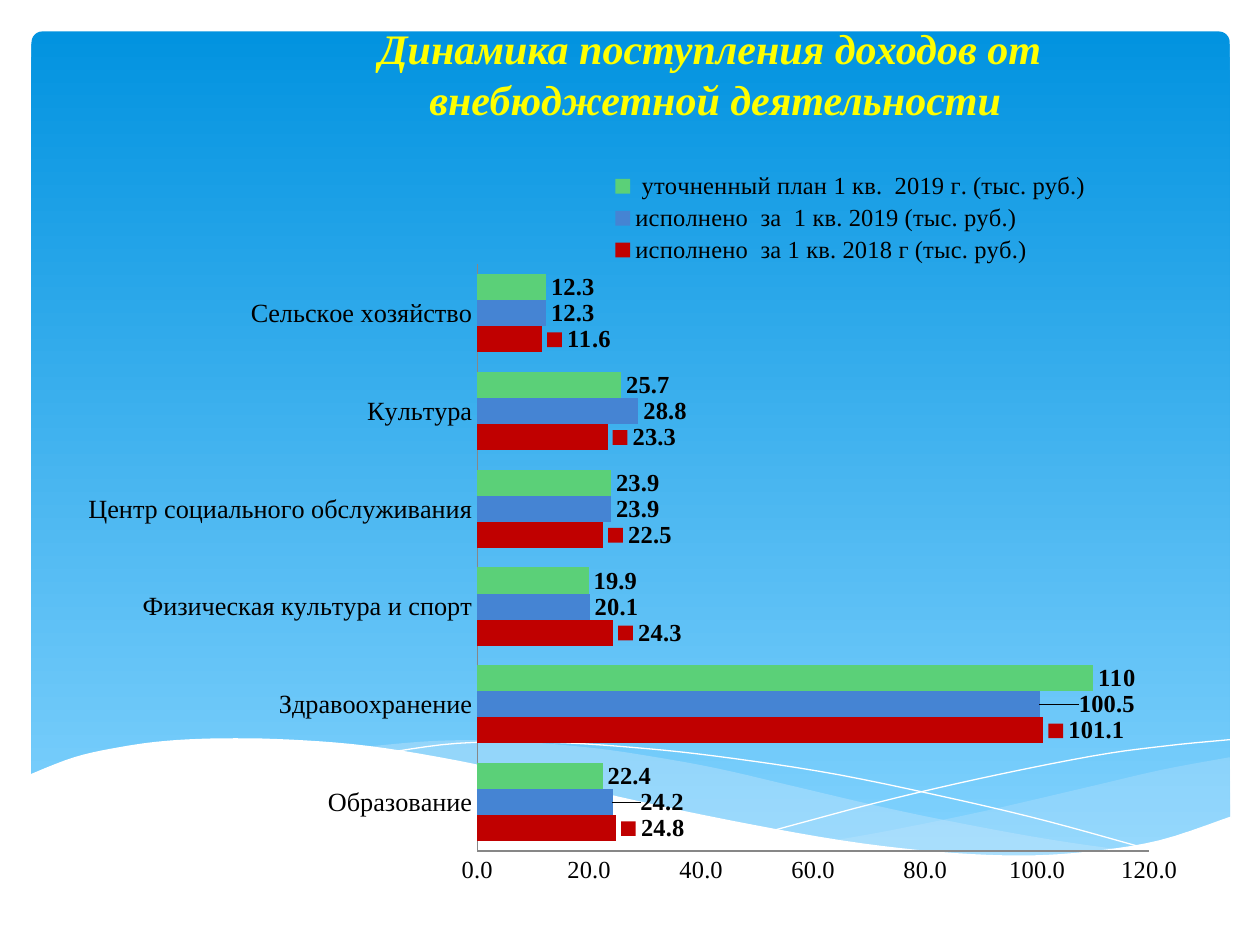
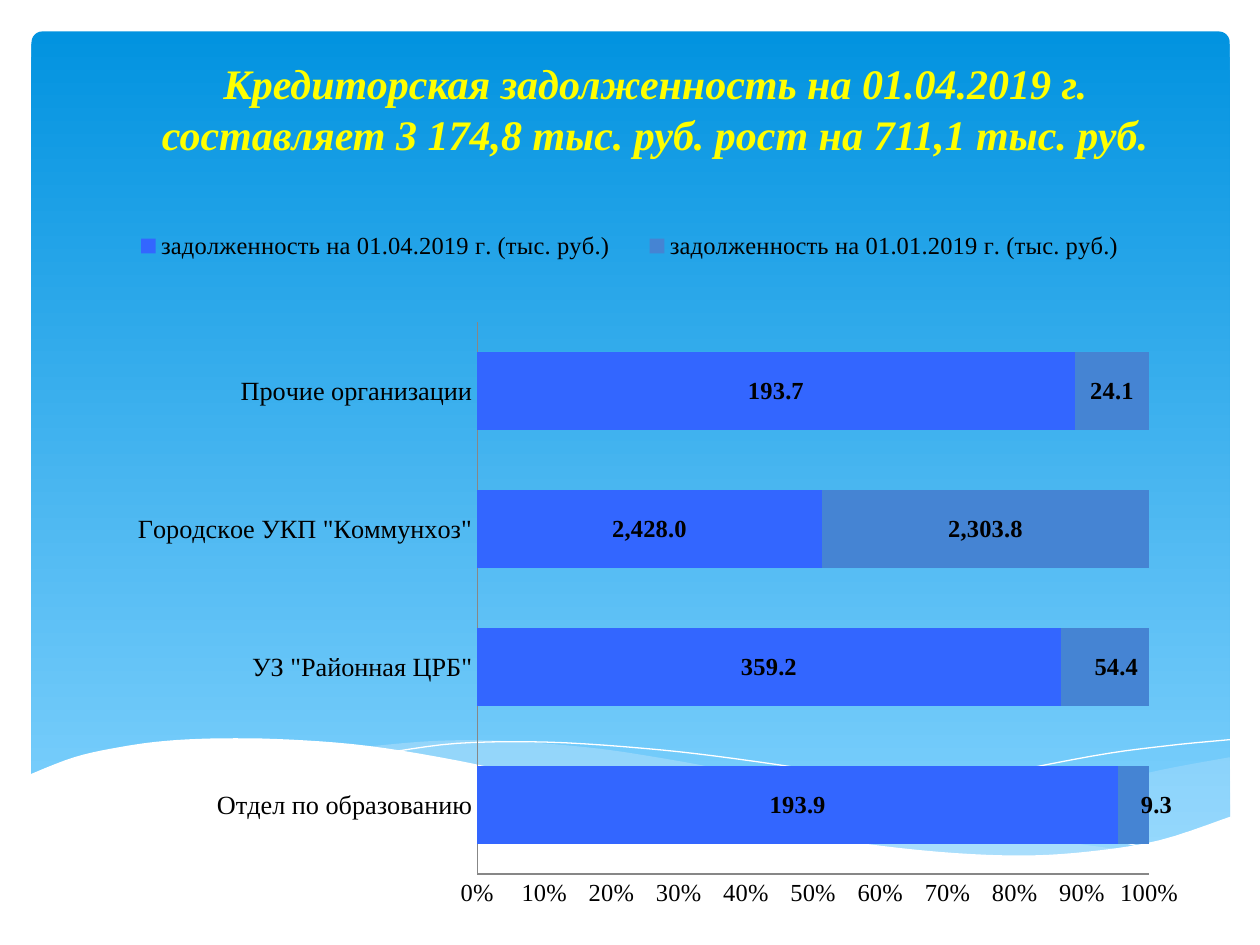
from pptx import Presentation
from pptx.chart.data import CategoryChartData
from pptx.dml.color import RGBColor
from pptx.enum.chart import XL_CHART_TYPE, XL_LABEL_POSITION, XL_LEGEND_POSITION, XL_TICK_MARK
from pptx.enum.shapes import MSO_SHAPE
from pptx.enum.text import MSO_ANCHOR, PP_ALIGN
from pptx.oxml import parse_xml
from pptx.oxml.ns import qn
from pptx.util import Inches, Pt
from lxml.etree import SubElement

HUES = {
    "top": "0293E0", "base": "83D3FE", "wave": "C6E7FC", "white": "FFFFFF",
    "title": "FFFF00", "text": "000000", "axis": "878787",
    "red": "C00000", "blue": "4584D3", "green": "5BD078", "royal": "3366FF",
}
SERIF = "Times New Roman"
FORM = "#,##0.0"
SPACE = 'xmlns:c="http://schemas.openxmlformats.org/drawingml/2006/chart"'
COLS = 100
PLOT = (0.365, 0.175, 0.594, 0.762)

RIGHT_TOP = [(97.6, 60.1), (92.2, 61.1), (86.2, 62.5), (78, 64.4), (70.7, 65.9), (66.2, 66.7)]
RIGHT_LOW = [(66.2, 66.7), (71.9, 67.4), (77, 67.9), (81.5, 68), (87.3, 67.6), (92.2, 66.7),
             (97.7, 64.9)]
MID_TOP = [(89.4, 67.5), (83.8, 66.7), (77.6, 65.6), (70.7, 64.2), (63, 62.4), (57, 61),
           (51.5, 60), (46.5, 59.3), (40, 58.8), (34.5, 58.8), (28.7, 59.3)]
MID_LOW = [(28.7, 59.3), (36.3, 60.4), (45, 62.4), (53, 64.2), (60.2, 65.7), (68.1, 67),
           (74.9, 67.8), (81.9, 68), (85.9, 67.9), (89.4, 67.5)]
FALL = [(31, 59.7), (36.3, 59), (43.3, 58.9), (51.1, 59.4), (58.2, 60.2), (66.6, 61.5),
        (76.1, 63.5), (83.2, 65.2), (90.8, 67.3)]
RISE = [(61.4, 65.9), (69.6, 63.7), (77.7, 61.8), (86.7, 60), (92.5, 59.2), (97.6, 58.7)]
FRONT = [(97.7, 64.8), (92, 66.7), (86.3, 67.6), (80.9, 67.9), (74.4, 67.6), (66.8, 66.7),
         (57.9, 65.1), (50.3, 63.5), (44.7, 62.2), (36.5, 60.4), (29.2, 59.2), (23, 58.7),
         (17.7, 58.6), (13.2, 58.8), (9.5, 59.3), (5.9, 60.1), (2.3, 61.5)]


def hue(name):
    """Return the named colour."""
    return RGBColor.from_string(HUES[name])


def smooth(knots, steps=5):
    """Return points of a smooth curve through the knots."""
    ends = [knots[0], *knots, knots[-1]]
    points = [knots[0]]
    for a, b, c, d in zip(ends, ends[1:], ends[2:], ends[3:]):
        for step in range(1, steps + 1):
            t = step / steps
            points.append(tuple(
                (2 * q + (r - p) * t + (2 * p - 5 * q + 4 * r - s) * t ** 2
                 + (3 * q - p - 3 * r + s) * t ** 3) / 2
                for p, q, r, s in zip(a, b, c, d)))
    return points


def layout(x, y, w=None, h=None, inner=False):
    """Return a chart layout, or a label shift when no size is given."""
    parts = [("layoutTarget", "inner")] if inner else []
    if w:
        parts += [("xMode", "edge"), ("yMode", "edge")]
    parts += [("x", x), ("y", y)]
    if w:
        parts += [("w", w), ("h", h)]
    body = "".join(f'<c:{tag} val="{val}"/>' for tag, val in parts)
    return parse_xml(f"<c:layout {SPACE}><c:manualLayout>{body}</c:manualLayout></c:layout>")


class Deck:
    """Hold the shared style and the current slide."""

    def __init__(self):
        """Set the page size and the shared backdrop."""
        self.file = Presentation()
        self.file.slide_width, self.file.slide_height = Inches(10), Inches(7.5)
        self.cell = self.file.slide_width / COLS
        self.base = self.file.slide_layouts[5]
        self.page()
        self.back()

    def page(self):
        """Start a slide."""
        self.slide = self.file.slides.add_slide(self.base)

    def span(self, *cells):
        """Turn grid cells into lengths."""
        return [round(cell * self.cell) for cell in cells]

    def back(self):
        """Draw the panel and waves and move them to the layout."""
        parts = [
            self.panel(2.5, 2.5, 95.1, 66),
            self.wave(smooth(RIGHT_TOP) + smooth(RIGHT_LOW), "wave", 29),
            self.wave(smooth(MID_TOP) + smooth(MID_LOW), "wave", 40),
            self.curve(FALL),
            self.curve(RISE),
            self.wave(smooth(FRONT) + [(2.3, 73.1), (97.7, 73.1)], "white"),
        ]
        tree = self.base.shapes.element
        for rank, part in enumerate(parts):
            part.element.nvSpPr.cNvPr.set("id", str(20 + rank))
            tree.insert(2 + rank, part.element)

    def panel(self, *box):
        """Draw the shaded panel."""
        panel = self.slide.shapes.add_shape(MSO_SHAPE.ROUNDED_RECTANGLE, *self.span(*box))
        panel.adjustments[0] = 0.013
        panel.shadow.inherit = False
        panel.line.fill.background()
        panel.fill.gradient()
        panel.fill.gradient_angle = 270
        for stop, name, place in zip(panel.fill.gradient_stops, ("top", "base"), (0, 1)):
            stop.color.rgb = hue(name)
            stop.position = place
        return panel

    def trace(self, points, close):
        """Draw an outline through grid points."""
        first, *rest = [self.span(*point) for point in points]
        pen = self.slide.shapes.build_freeform(*first)
        pen.add_line_segments(rest, close=close)
        shape = pen.convert_to_shape()
        shape.shadow.inherit = False
        return shape

    def wave(self, points, name, alpha=100):
        """Draw a filled wave."""
        wave = self.trace(points, True)
        wave.line.fill.background()
        wave.fill.solid()
        wave.fill.fore_color.rgb = hue(name)
        if alpha < 100:
            tone = wave.element.spPr.find(qn("a:solidFill"))[0]
            SubElement(tone, qn("a:alpha")).set("val", str(alpha * 1000))
        return wave

    def curve(self, knots):
        """Draw a hairline curve."""
        curve = self.trace(smooth(knots), False)
        curve.fill.background()
        curve.line.color.rgb = hue("white")
        curve.line.width = Pt(0)
        return curve

    def title(self, text, *box):
        """Fill the title."""
        head = self.slide.shapes.title
        head.left, head.top, head.width, head.height = self.span(*box)
        frame = head.text_frame
        frame.text = text
        frame.word_wrap = True
        frame.vertical_anchor = MSO_ANCHOR.BOTTOM
        for line in frame.paragraphs:
            line.alignment = PP_ALIGN.CENTER
            for run in line.runs:
                self.font(run.font, 24, "title", True)
                run.font.italic = True

    def font(self, font, size, name="text", bold=False):
        """Format a font."""
        font.name, font.size, font.bold = SERIF, Pt(size), bold
        font.color.rgb = hue(name)

    def chart(self, kind, box, cats, rows, key, form):
        """Add a bar chart."""
        data = CategoryChartData()
        data.categories = cats
        for row in rows:
            data.add_series(row["name"], row["vals"])
        chart = self.slide.shapes.add_chart(kind, *self.span(*box), data).chart
        chart.has_title = False
        chart.font.name, chart.font.size = "Calibri", Pt(18)
        chart.font.color.rgb = hue("text")
        plot = chart.plots[0]
        plot.gap_width = 75
        plot.vary_by_categories = False
        area = chart.element.chart.plotArea
        for old in area.findall(qn("c:layout")):
            area.remove(old)
        area.insert(0, layout(*PLOT, inner=True))
        self.legend(chart, key)
        self.axis(chart.category_axis, 15, 0.25)
        self.axis(chart.value_axis, 14, 0.75)
        chart.value_axis.tick_labels.number_format = form
        chart.value_axis.tick_labels.number_format_is_linked = False
        for series, row in zip(plot.series, rows):
            series.format.fill.solid()
            series.format.fill.fore_color.rgb = hue(row["hue"])
            self.labels(series, row, kind == XL_CHART_TYPE.BAR_CLUSTERED)
        return chart

    def legend(self, chart, key):
        """Place the legend."""
        chart.has_legend = True
        legend = chart.legend
        legend.position = XL_LEGEND_POSITION.TOP
        legend.include_in_layout = False
        self.font(legend.font, 14)
        node = legend.font and chart.element.chart.find(qn("c:legend"))
        for old in node.findall(qn("c:layout")):
            node.remove(old)
        node.find(qn("c:legendPos")).addnext(layout(*key))

    def axis(self, axis, size, width):
        """Format an axis."""
        axis.has_major_gridlines = False
        axis.major_tick_mark = axis.minor_tick_mark = XL_TICK_MARK.NONE
        axis.format.line.color.rgb = hue("axis")
        axis.format.line.width = Pt(width)
        self.font(axis.tick_labels.font, size)

    def labels(self, series, row, outer):
        """Show values and shift the chosen ones."""
        form = row.get("form", FORM)
        labels = series.data_labels
        labels.show_value = True
        labels.show_legend_key = row.get("key", False)
        labels.number_format = form
        labels.number_format_is_linked = False
        self.font(labels.font, 14, bold=True)
        place = XL_LABEL_POSITION.OUTSIDE_END if outer else XL_LABEL_POSITION.CENTER
        labels.position = place
        for spot, shift in row.get("moves", {}).items():
            label = series.points[spot].data_label
            self.font(label.font, 14, bold=True)
            label.position = place
            node = next(item for item in series.data_labels._element.findall(qn("c:dLbl"))
                        if item.find(qn("c:idx")).get("val") == str(spot))
            node.insert(1, layout(*shift))
            node.insert(2, parse_xml(
                f'<c:numFmt {SPACE} formatCode="{form}" sourceLinked="0"/>'))


def main():
    """Build both slides."""
    deck = Deck()
    deck.title("Динамика поступления доходов от\n внебюджетной деятельности",
               9.1, 4.5, 94.5, 5.8)
    chart = deck.chart(
        XL_CHART_TYPE.BAR_CLUSTERED, (5.1, 10.3, 89.8, 61.1),
        ["Образование", "Здравоохранение", "Физическая культура и спорт",
         "Центр социального обслуживания", "Культура", "Сельское хозяйство"],
        [{"name": "исполнено  за 1 кв. 2018 г (тыс. руб.)", "hue": "red", "key": True,
          "vals": [24.8, 101.1, 24.3, 22.5, 23.3, 11.6]},
         {"name": "исполнено  за  1 кв. 2019 (тыс. руб.)", "hue": "blue",
          "vals": [24.2, 100.5, 20.1, 23.9, 28.8, 12.3],
          "moves": {0: (0.02, 0), 1: (0.03, 0)}},
         {"name": " уточненный план 1 кв.  2019 г. (тыс. руб.)", "hue": "green",
          "form": "General", "vals": [22.4, 110, 19.9, 23.9, 25.7, 12.3]}],
        (0.47, 0.05, 0.45, 0.13), FORM)
    chart.value_axis.minimum_scale, chart.value_axis.maximum_scale = 0, 120
    chart.value_axis.major_unit = 20

    deck.page()
    deck.title("Кредиторская задолженность на 01.04.2019 г. составляет 3 174,8 тыс. руб. "
               "рост на 711,1 тыс. руб.", 9.1, 1.3, 85.8, 11.8)
    chart = deck.chart(
        XL_CHART_TYPE.BAR_STACKED_100, (5.1, 15.5, 89.8, 57.5),
        ["Отдел по образованию", 'УЗ "Районная ЦРБ"', 'Городское УКП "Коммунхоз"',
         "Прочие организации"],
        [{"name": "задолженность на 01.04.2019 г. (тыс. руб.)", "hue": "royal",
          "vals": [193.9, 359.2, 2428, 193.7]},
         {"name": "задолженность на 01.01.2019 г. (тыс. руб.)", "hue": "blue",
          "vals": [9.3, 54.4, 2303.8, 24.1],
          "moves": {0: (0.02, 0), 1: (0.01, 0)}}],
        (0.04, 0.03, 0.92, 0.08), "0%")
    chart.plots[0].overlap = 100
    chart.value_axis.major_unit = 0.1
    deck.file.save("out.pptx")


if __name__ == "__main__":
    main()
